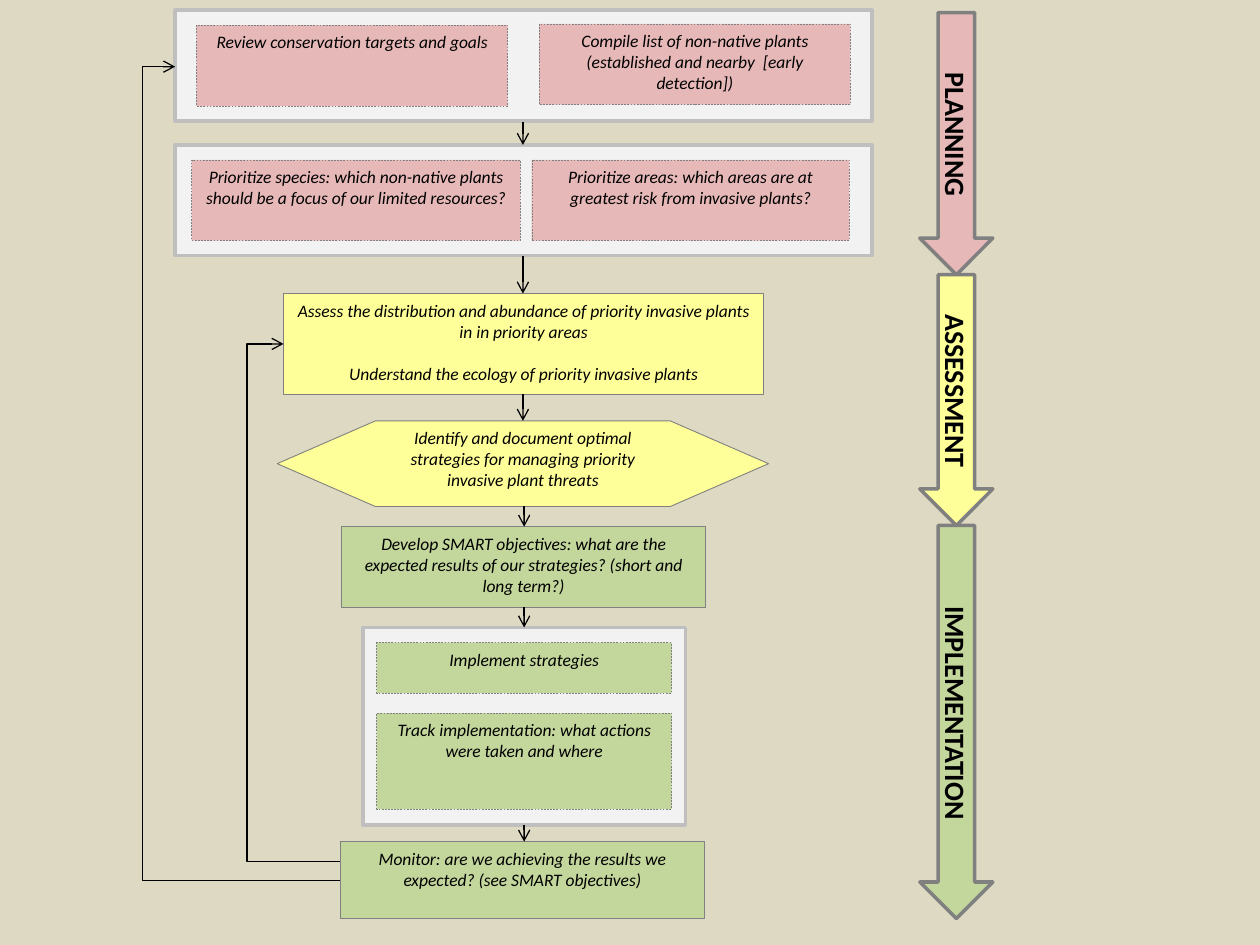
from lxml import etree
from pptx import Presentation
from pptx.dml.color import RGBColor
from pptx.enum import dml, shapes, text
from pptx.oxml import ns
from pptx.util import Inches, Pt

SAND = RGBColor(0xDD, 0xD9, 0xC3)
PANEL = RGBColor(0xF2, 0xF2, 0xF2)
PANEL_EDGE = RGBColor(0xBF, 0xBF, 0xBF)
PINK = RGBColor(0xE6, 0xB9, 0xB8)
YELLOW = RGBColor(0xFF, 0xFF, 0x99)
GREEN = RGBColor(0xC3, 0xD6, 0x9B)
GRAY = RGBColor(0x80, 0x80, 0x80)
BLACK = RGBColor(0, 0, 0)

RECTANGLE = shapes.MSO_SHAPE.RECTANGLE
HEXAGON = shapes.MSO_SHAPE.FLOWCHART_PREPARATION


def add_box(slide, box, fill, edge=GRAY, weight=0.25, kind=RECTANGLE):
    """Add a filled, outlined shape in a box given in inches."""
    shape = slide.shapes.add_shape(kind, *map(Inches, box))
    shape.shadow.inherit = False
    shape.fill.solid()
    shape.fill.fore_color.rgb = fill
    shape.line.color.rgb = edge
    shape.line.width = Pt(weight)
    return shape


def write(shape, lines, size, bold=False, italic=False, anchor=text.MSO_ANCHOR.TOP):
    """Write centred paragraphs into a shape, one blank line's height apart."""
    frame = shape.text_frame
    frame.word_wrap = True
    frame.vertical_anchor = anchor
    for index, line in enumerate(lines):
        paragraph = frame.add_paragraph() if index else frame.paragraphs[0]
        paragraph.text = line
        paragraph.alignment = text.PP_ALIGN.CENTER
        if index:
            paragraph.space_before = Pt(12)
        font = paragraph.runs[0].font
        font.name, font.size = "Calibri", Pt(size)
        font.bold, font.italic = bold, italic
        font.color.rgb = BLACK


def add_step(slide, box, fill, *lines, kind=RECTANGLE, weight=0.25, dashed=False):
    """Add one step of the workflow."""
    shape = add_box(slide, box, fill, weight=weight, kind=kind)
    if dashed:
        shape.line.dash_style = dml.MSO_LINE.DASH
    write(shape, lines, 10, italic=True)


def add_panel(slide, box, fill, steps):
    """Add a pale panel holding dashed steps at offsets from its corner."""
    add_box(slide, box, PANEL, PANEL_EDGE, 2)
    left, top = box[:2]
    for (x, y, width, height), line in steps:
        add_step(slide, (left + x, top + y, width, height), fill, line, dashed=True)


def add_arrow(slide, start, end, bend_x=None):
    """Add an open-headed arrow, bent through the vertical at bend_x if given."""
    kind = shapes.MSO_CONNECTOR.STRAIGHT if bend_x is None else shapes.MSO_CONNECTOR.ELBOW
    connector = slide.shapes.add_connector(kind, *map(Inches, start + end))
    connector.line.color.rgb = BLACK
    connector.line.width = Pt(0.75)
    properties = connector._element.spPr
    if bend_x is not None:
        ratio = (bend_x - start[0]) / (end[0] - start[0])
        guides = properties.find(ns.qn("a:prstGeom")).get_or_add_avLst()
        etree.SubElement(guides, ns.qn("a:gd"), name="adj1", fmla=f"val {round(ratio * 100000)}")
    outline = connector.line._get_or_add_ln()
    etree.SubElement(outline, ns.qn("a:tailEnd"), type="arrow")
    etree.SubElement(properties, ns.qn("a:effectLst"))


def add_phases(slide, box, phases):
    """Stack downward phase arrows in a column, each with its own length."""
    left, top, width = box
    for label, length, fill in phases:
        turned = (left + (width - length) / 2, top + (length - width) / 2, length, width)
        shape = add_box(slide, turned, fill, weight=2, kind=shapes.MSO_SHAPE.RIGHT_ARROW)
        shape.rotation = 90
        write(shape, [label], 16, bold=True, anchor=text.MSO_ANCHOR.MIDDLE)
        top += length


def add_workflow(slide):
    """Add the panels, steps and arrows of the workflow."""
    add_panel(slide, (1.39, 0.08, 5.53, 0.88), PINK, [
        ((0.17, 0.12, 2.47, 0.64), "Review conservation targets and goals"),
        ((2.89, 0.11, 2.47, 0.64),
         "Compile list of non-native plants (established and nearby  [early detection])"),
    ])
    add_panel(slide, (1.39, 1.15, 5.53, 0.88), PINK, [
        ((0.13, 0.12, 2.61, 0.64),
         "Prioritize species: which non-native plants should be a focus of our limited resources?"),
        ((2.83, 0.12, 2.52, 0.64),
         "Prioritize areas: which areas are at greatest risk from invasive plants?"),
    ])
    add_step(slide, (2.25, 2.33, 3.81, 0.8), YELLOW,
             "Assess the distribution and abundance of priority invasive plants in in priority areas",
             "Understand the ecology of priority invasive plants")
    add_step(slide, (2.2, 3.34, 3.9, 0.68), YELLOW,
             "Identify and document optimal strategies for managing priority invasive plant threats",
             kind=HEXAGON, weight=0.5)
    add_step(slide, (2.71, 4.18, 2.89, 0.64), GREEN,
             "Develop SMART objectives: what are the expected results of our strategies? "
             "(short and long term?)")
    add_panel(slide, (2.88, 4.98, 2.56, 1.57), GREEN, [
        ((0.11, 0.12, 2.34, 0.4), "Implement strategies"),
        ((0.11, 0.68, 2.34, 0.76), "Track implementation: what actions were taken and where"),
    ])
    add_step(slide, (2.7, 6.68, 2.89, 0.61), GREEN,
             "Monitor: are we achieving the results we expected? (see SMART objectives)")
    gaps = [(0.97, 1.15), (2.03, 2.33), (3.13, 3.34), (4.02, 4.18), (4.82, 4.98), (6.55, 6.68)]
    for top, bottom in gaps:
        center = 4.15 if top < 4 else 4.16
        add_arrow(slide, (center, top), (center, bottom))
    add_arrow(slide, (2.7, 6.99), (1.39, 0.53), bend_x=1.13)
    add_arrow(slide, (2.7, 6.84), (2.25, 2.73), bend_x=1.96)


def main():
    """Build and save the slide."""
    presentation = Presentation()
    presentation.slide_width, presentation.slide_height = Inches(10), Inches(7.5)
    slide = presentation.slides.add_slide(presentation.slide_layouts[6])
    slide.background.fill.solid()
    slide.background.fill.fore_color.rgb = SAND
    add_workflow(slide)
    add_phases(slide, (7.3, 0.1, 0.58), [
        ("PLANNING", 2.08, PINK),
        ("ASSESSMENT", 1.99, YELLOW),
        ("IMPLEMENTATION", 3.12, GREEN),
    ])
    presentation.save("out.pptx")


if __name__ == "__main__":
    main()
